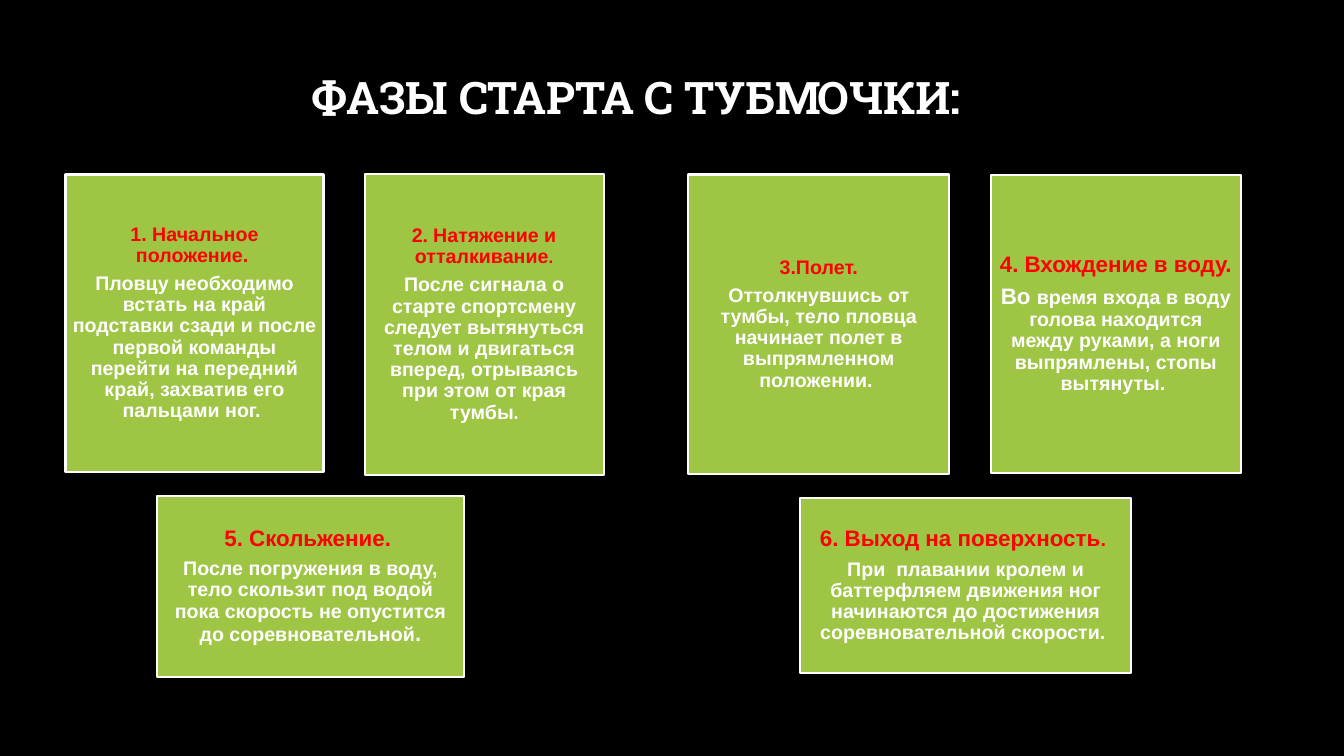
from pptx import Presentation
from pptx.dml.color import RGBColor
from pptx.enum.shapes import MSO_SHAPE
from pptx.enum.text import MSO_ANCHOR, PP_ALIGN
from pptx.util import Pt

BLACK = RGBColor(0x00, 0x00, 0x00)
WHITE = RGBColor(0xFF, 0xFF, 0xFF)
GREEN = RGBColor(0x9E, 0xC5, 0x44)
RED = RGBColor(0xFF, 0x00, 0x00)

TITLE = "ФАЗЫ СТАРТА С ТУБМОЧКИ:"
TITLE_BOX = (46.8, 28.8, 815, 85)

PHASES = [
    ((46.8, 124.6, 184.3, 212.4), 4.3,
     [("1. Начальное положение.", 14, "Arial"), (" ", 12, "Arial")],
     [("Пловцу необходимо встать на край подставки сзади и после первой "
       "команды перейти на передний край, захватив его пальцами ног. ",
       14, "Arial")]),
    ((260.6, 124.6, 170.6, 214.4), 4.3,
     [("2", 14, "Arial"), (".", 14, "Times New Roman"),
      (" Натяжение и отталкивание", 14, "Arial"), (".", 12, "Arial")],
     [("После сигнала о старте спортсмену следует вытянуться телом и "
       "двигаться вперед, отрываясь при этом от края тумбы", 14, "Arial"),
      (".", 14, "Cambria")]),
    ((491.6, 124.6, 186.5, 214), 4.3,
     [("3.Полет.", 14, "Arial")],
     [("Оттолкнувшись от тумбы, тело пловца начинает полет в "
       "выпрямленном положении. ", 14, "Arial")]),
    ((707.8, 125.2, 178.5, 212.4), 4.8,
     [("4. Вхождение в воду.", 16, "Arial")],
     [("Во ", 16, "Arial"),
      ("время входа в воду голова находится между руками, а ноги "
       "выпрямлены, стопы вытянуты. ", 14, "Arial")]),
    ((112.3, 354.3, 219, 129.6), 4.8,
     [("5. Скольжение.", 16, "Arial"), (" ", 14, "Arial")],
     [("После погружения в воду, тело скользит под водой пока скорость "
       "не опустится до соревновательной", 14, "Arial"),
      (".", 16, "Arial")]),
    ((571.7, 355.7, 236.2, 125.3), 4.8,
     [("6. Выход на поверхность", 16, "Arial"), (". ", 14, "Arial")],
     [("При  плавании кролем и баттерфляем движения ног начинаются до "
       "достижения соревновательной скорости. ", 14, "Arial")]),
]


def add_runs(para, runs, color):
    para.alignment = PP_ALIGN.CENTER
    para.line_spacing = 0.9
    for text, size, face in runs:
        run = para.add_run()
        run.text = text
        font = run.font
        font.size = Pt(size)
        font.name = face
        font.bold = True
        font.color.rgb = color


def add_phase(slide, box, inset, head, body):
    card = slide.shapes.add_shape(MSO_SHAPE.RECTANGLE, *map(Pt, box))
    card.shadow.inherit = False
    card.fill.solid()
    card.fill.fore_color.rgb = GREEN
    card.line.color.rgb = WHITE
    card.line.width = Pt(1.5)
    frame = card.text_frame
    frame.word_wrap = True
    frame.vertical_anchor = MSO_ANCHOR.MIDDLE
    frame.margin_left = frame.margin_right = Pt(inset)
    frame.margin_top = frame.margin_bottom = Pt(inset)
    paras = (frame.paragraphs[0], frame.add_paragraph())
    for para, runs, color in zip(paras, (head, body), (RED, WHITE)):
        add_runs(para, runs, color)
        para.space_after = Pt(round(0.35 * runs[0][1], 1))


def main():
    deck = Presentation()
    deck.slide_width, deck.slide_height = Pt(960), Pt(540)
    slide = deck.slides.add_slide(deck.slide_layouts[5])
    slide.background.fill.solid()
    slide.background.fill.fore_color.rgb = BLACK

    title = slide.shapes.title
    title.left, title.top, title.width, title.height = map(Pt, TITLE_BOX)
    title.text_frame.vertical_anchor = MSO_ANCHOR.MIDDLE
    add_runs(title.text_frame.paragraphs[0],
             [(TITLE, 32, "Roboto Slab")], WHITE)

    for phase in PHASES:
        add_phase(slide, *phase)
    deck.save("out.pptx")


if __name__ == "__main__":
    main()
